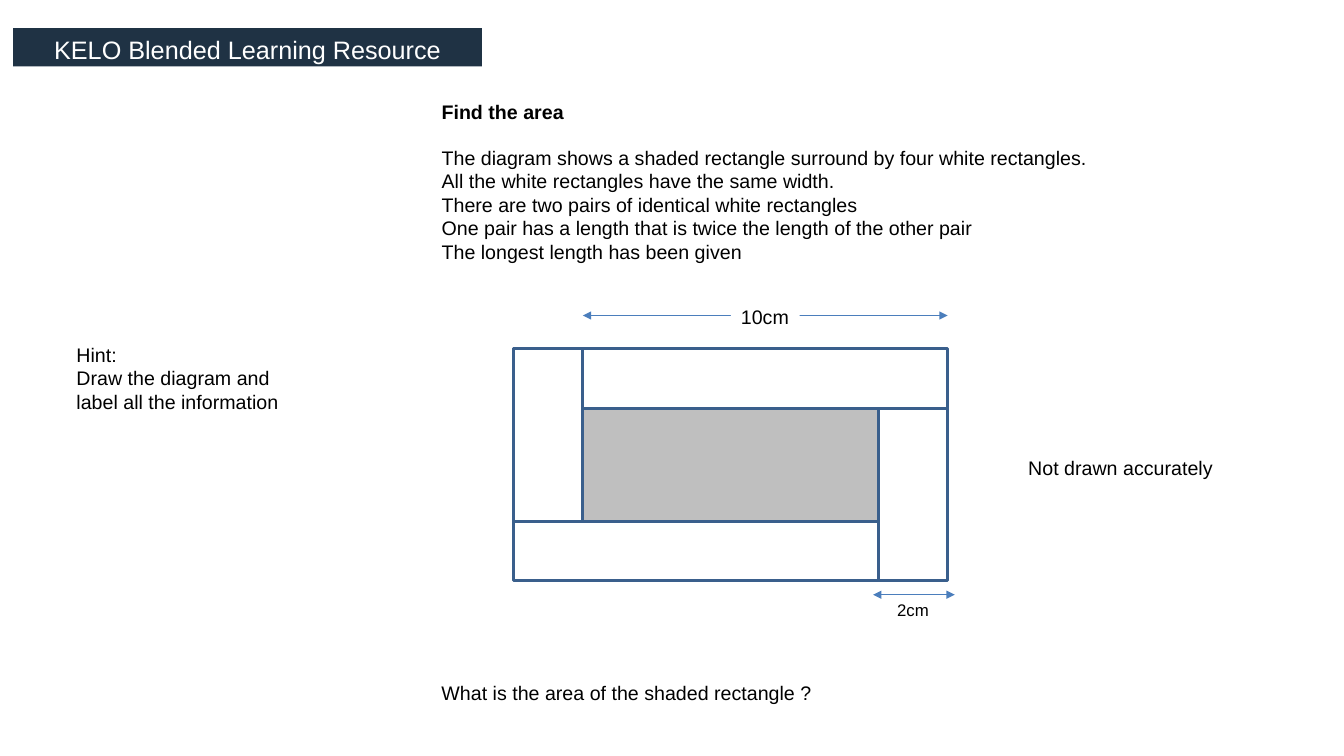
from pptx import Presentation
from pptx import util as u
from pptx.dml.color import RGBColor
from pptx.enum import shapes, text
from pptx.oxml import ns
from lxml import etree

WHITE = RGBColor(0xFF, 0xFF, 0xFF)
BLACK = RGBColor(0x00, 0x00, 0x00)
NAVY = RGBColor(0x1F, 0x32, 0x44)
GREY = RGBColor(0xBF, 0xBF, 0xBF)
EDGE = RGBColor(0x3A, 0x5F, 0x8C)
BLUE = RGBColor(0x4B, 0x7E, 0xBC)

TASK = [
    "Find the area",
    "The diagram shows a shaded rectangle surround by four white rectangles.",
    "All the white rectangles have the same width.",
    "There are two pairs of identical white rectangles",
    "One pair has a length that is twice the length of the other pair",
    "The longest length has been given",
]


def place(shape, x, y, w, h):
    shape.left, shape.top = u.Inches(x), u.Inches(y)
    shape.width, shape.height = u.Inches(w), u.Inches(h)


def paint(shape, color):
    shape.fill.solid()
    shape.fill.fore_color.rgb = color


def write(frame, lines, size=14, color=BLACK):
    frame.text = "\n".join(lines)
    frame.auto_size = text.MSO_AUTO_SIZE.NONE
    frame.word_wrap = False
    for para in frame.paragraphs:
        for run in para.runs:
            font = run.font
            font.name, font.size = "Arial", u.Pt(size)
            font.color.rgb = color


def add_title(slide):
    title = slide.shapes.title
    place(title, 0.13, 0.28, 4.65, 0.38)
    paint(title, NAVY)
    frame = title.text_frame
    write(frame, ["KELO Blended Learning Resource"], 18, WHITE)
    frame.vertical_anchor = text.MSO_ANCHOR.MIDDLE
    frame.margin_top, frame.margin_bottom = u.Inches(0.05), u.Inches(0)
    frame.paragraphs[0].alignment = text.PP_ALIGN.CENTER


def add_task(slide):
    body = slide.placeholders[1]
    place(body, 4.28, 0.94, 6.63, 1.75)
    frame = body.text_frame
    write(frame, TASK)
    for para in frame.paragraphs:
        props = para._p.get_or_add_pPr()
        props.set("marL", "0")
        props.set("indent", "0")
        etree.SubElement(props, ns.qn("a:buNone"))
        para.space_before = u.Pt(0)
    head, intro = frame.paragraphs[:2]
    head.runs[0].font.bold = True
    intro.space_before = u.Pt(16)


def add_label(slide, lines, x, y, w, h, size=14, fill=None):
    box = slide.shapes.add_textbox(*map(u.Inches, (x, y, w, h)))
    write(box.text_frame, lines, size)
    if fill is not None:
        paint(box, fill)


def add_rect(slide, x, y, w, h, fill=WHITE):
    rect = slide.shapes.add_shape(
        shapes.MSO_SHAPE.RECTANGLE, *map(u.Inches, (x, y, w, h)))
    rect.shadow.inherit = False
    paint(rect, fill)
    rect.line.color.rgb = EDGE
    rect.line.width = u.Pt(2)


def add_arrow(slide, start, end, y):
    arrow = slide.shapes.add_connector(
        shapes.MSO_CONNECTOR.STRAIGHT, *map(u.Inches, (start, y, end, y)))
    arrow.line.color.rgb = BLUE
    arrow.line.width = u.Pt(0.75)
    line = arrow.line._get_or_add_ln()
    for tip in ("a:headEnd", "a:tailEnd"):
        etree.SubElement(line, ns.qn(tip)).set("type", "triangle")
    etree.SubElement(arrow._element.spPr, ns.qn("a:effectLst"))


def add_diagram(slide):
    left, top = 5.09, 3.46
    long, short = 3.62, 1.71
    wide, high = 0.69, 0.59
    inner, right = left + wide, left + long
    upper, lower = top + high, top + short
    add_rect(slide, inner, upper, right - inner, lower - upper, GREY)
    add_rect(slide, inner, top, long, high)
    add_rect(slide, left, lower, long, high)
    add_rect(slide, right, upper, wide, short)
    add_rect(slide, left, top, wide, short)
    add_arrow(slide, inner, inner + long, 3.13)
    add_label(slide, ["10cm"], 7.25, 2.98, 0.68, 0.34, fill=WHITE)
    add_label(slide, ["2cm"], 8.8, 5.9, 0.53, 0.31, 12, WHITE)
    add_arrow(slide, 8.66, 9.47, 5.9)


def main():
    deck = Presentation()
    deck.slide_width, deck.slide_height = u.Inches(13.33), u.Inches(7.5)
    slide = deck.slides.add_slide(deck.slide_layouts[1])
    add_title(slide)
    add_task(slide)
    add_diagram(slide)
    add_label(slide, ["Not drawn accurately"], 10.1, 4.47, 2.04, 0.34)
    add_label(slide, ["What is the area of the shaded rectangle ?"],
              4.28, 6.71, 3.89, 0.34)
    add_label(slide, ["Hint:", "Draw the diagram and",
                      "label all the information"], 0.66, 3.35, 2.21, 0.81)
    deck.save("out.pptx")


if __name__ == "__main__":
    main()
